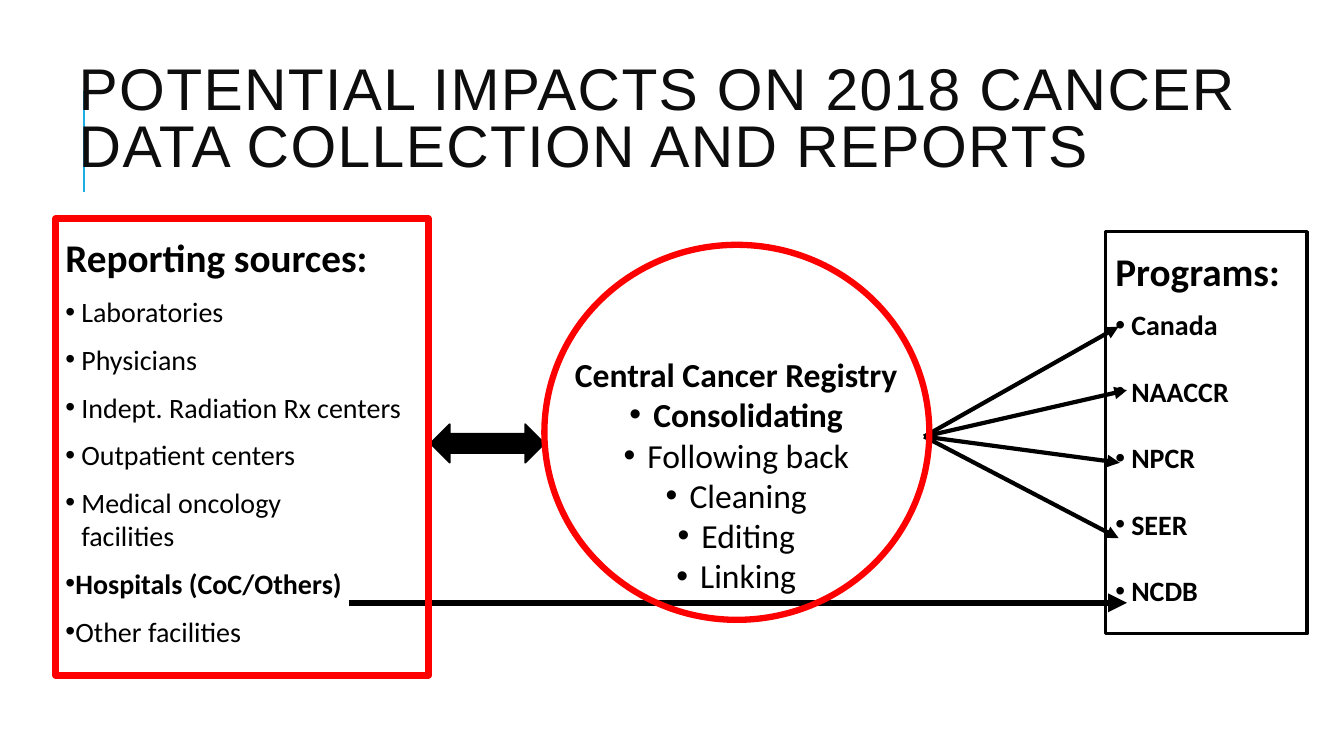
from pptx import Presentation
from pptx import util as u
from pptx.dml.color import RGBColor
from pptx.enum import shapes, text
from pptx.oxml.ns import qn
from lxml import etree

BLACK, RED, BLUE, INK = "000000", "FF0000", "1CADE4", "0D0D0D"


def paint(color_format, hex_color):
    """Set a solid colour from a hex string."""
    color_format.rgb = RGBColor.from_string(hex_color)


def place(shape, box):
    """Move a shape to a box given in centimetres."""
    shape.left, shape.top, shape.width, shape.height = map(u.Cm, box)


def outline(slide, kind, box, color, weight, fill=None):
    """Add a preset shape with a coloured outline and an optional fill."""
    shape = slide.shapes.add_shape(kind, *map(u.Cm, box))
    shape.shadow.inherit = False
    if fill:
        shape.fill.solid()
        paint(shape.fill.fore_color, fill)
    else:
        shape.fill.background()
    paint(shape.line.color, color)
    shape.line.width = u.Pt(weight)
    return shape


def connect(slide, start, end, color, weight, arrow=True):
    """Add a straight line, with an arrowhead at its end if asked."""
    line = slide.shapes.add_connector(
        shapes.MSO_CONNECTOR.STRAIGHT, *map(u.Cm, start + end))
    paint(line.line.color, color)
    line.line.width = u.Pt(weight)
    if arrow:
        etree.SubElement(line.line._get_or_add_ln(), qn("a:tailEnd"), type="triangle")
    etree.SubElement(line._element.spPr, qn("a:effectLst"))
    return line


def write(paragraph, wording, size, bold=False, align=text.PP_ALIGN.LEFT, before=0):
    """Fill a paragraph and format its runs."""
    paragraph.text = wording
    paragraph.alignment = align
    paragraph.space_before = u.Pt(before)
    for run in paragraph.runs:
        run.font.name = "Calibri"
        run.font.size = u.Pt(size)
        run.font.bold = bold
        paint(run.font.color, BLACK)


def bullet(paragraph, hang):
    """Give a paragraph a round bullet with a hanging indent."""
    properties = paragraph._p.get_or_add_pPr()
    properties.set("marL", str(u.Cm(hang)))
    properties.set("indent", str(-u.Cm(hang)))
    etree.SubElement(properties, qn("a:buFont"), typeface="Arial")
    etree.SubElement(properties, qn("a:buChar"), char="•")


def add_title(slide, box):
    """Place the title and the thin accent line behind it."""
    title = slide.shapes.title
    place(title, box)
    frame = title.text_frame
    frame.text = "POTENTIAL IMPACTS ON 2018 CANCER DATA COLLECTION AND REPORTS"
    frame.vertical_anchor = text.MSO_ANCHOR.MIDDLE
    heading = frame.paragraphs[0]
    heading.alignment = text.PP_ALIGN.LEFT
    heading.line_spacing = 0.8
    font = heading.runs[0].font
    font.name, font.size = "Arial", u.Pt(42)
    paint(font.color, INK)
    font._element.set("spc", "100")
    left, top = box[0] + 0.38, box[1] + 1.12
    accent = connect(slide, (left, top + 2.54), (left, top), BLUE, 1.5, arrow=False)
    slide.shapes._spTree.insert(2, accent._element)


def add_list_box(slide, box, color, weight, heading, items, gap):
    """Draw a framed list; items are (wording, bold, hang) and gap parts them."""
    frame = outline(slide, shapes.MSO_SHAPE.RECTANGLE, box, color, weight).text_frame
    frame.word_wrap = True
    frame.vertical_anchor = text.MSO_ANCHOR.TOP
    frame.margin_top = u.Cm(0.38)
    write(frame.paragraphs[0], heading, 28, bold=True)
    for index, (wording, bold, hang) in enumerate(items):
        entry = frame.add_paragraph()
        write(entry, wording, 20, bold, before=gap if index else 10)
        bullet(entry, hang)


def add_registry(slide, box):
    """Draw the registry circle and its list of tasks."""
    left, top, width, height = box
    outline(slide, shapes.MSO_SHAPE.OVAL, box, RED, 4.5)
    tasks_box = (left + 0.2, top + 2.62, width - 0.43, height - 3.05)
    frame = slide.shapes.add_textbox(*map(u.Cm, tasks_box)).text_frame
    frame.word_wrap = True
    centre = text.PP_ALIGN.CENTER
    write(frame.paragraphs[0], "Central Cancer Registry", 24, True, centre)
    for task in ("Consolidating", "Following back", "Cleaning", "Editing", "Linking"):
        entry = frame.add_paragraph()
        write(entry, task, 24, task == "Consolidating", centre)
        bullet(entry, 0.6)


def add_flows(slide, box):
    """Draw the arrows between the sources, the registry and the programs."""
    left, top, width, height = box
    connect(slide, (left, top + height), (left + width, top + height), BLACK, 4.5)
    outline(slide, shapes.MSO_SHAPE.LEFT_RIGHT_ARROW,
            (left + 2.06, top + 2.46, 2.87, 0.97), BLACK, 1.25, fill=BLACK)
    hub = (left + 14.5, top + 2.77)
    for right, down in ((19.4, 0), (19.61, 1.6), (19.43, 3.43), (19.4, 5.33)):
        connect(slide, hub, (left + right, top + down), BLACK, 3)


def main():
    """Build the slide and save it."""
    deck = Presentation()
    deck.slide_width, deck.slide_height = u.Cm(33.87), u.Cm(19.05)
    slide = deck.slides.add_slide(deck.slide_layouts[5])
    add_title(slide, (1.73, 1.17, 32.13, 3.81))
    programs = [(name, True, 0.4) for name in ("Canada", "NAACCR", "NPCR", "SEER", "NCDB")]
    add_list_box(slide, (27.86, 5.84, 5.08, 10.13), BLACK, 2.5, "Programs:", programs, 23.5)
    add_flows(slide, (8.79, 8.23, 19.61, 6.96))
    sources = [(name, False, 0.4) for name in (
        "Laboratories", "Physicians", "Indept. Radiation Rx centers",
        "Outpatient centers", "Medical oncology\vfacilities")]
    sources += [("Hospitals (CoC/Others)", True, 0.25), ("Other facilities", False, 0.25)]
    add_list_box(slide, (1.4, 5.51, 9.4, 11.51), RED, 4.5, "Reporting sources:", sources, 10)
    add_registry(slide, (13.72, 6.17, 9.7, 9.45))
    deck.save("out.pptx")


if __name__ == "__main__":
    main()
